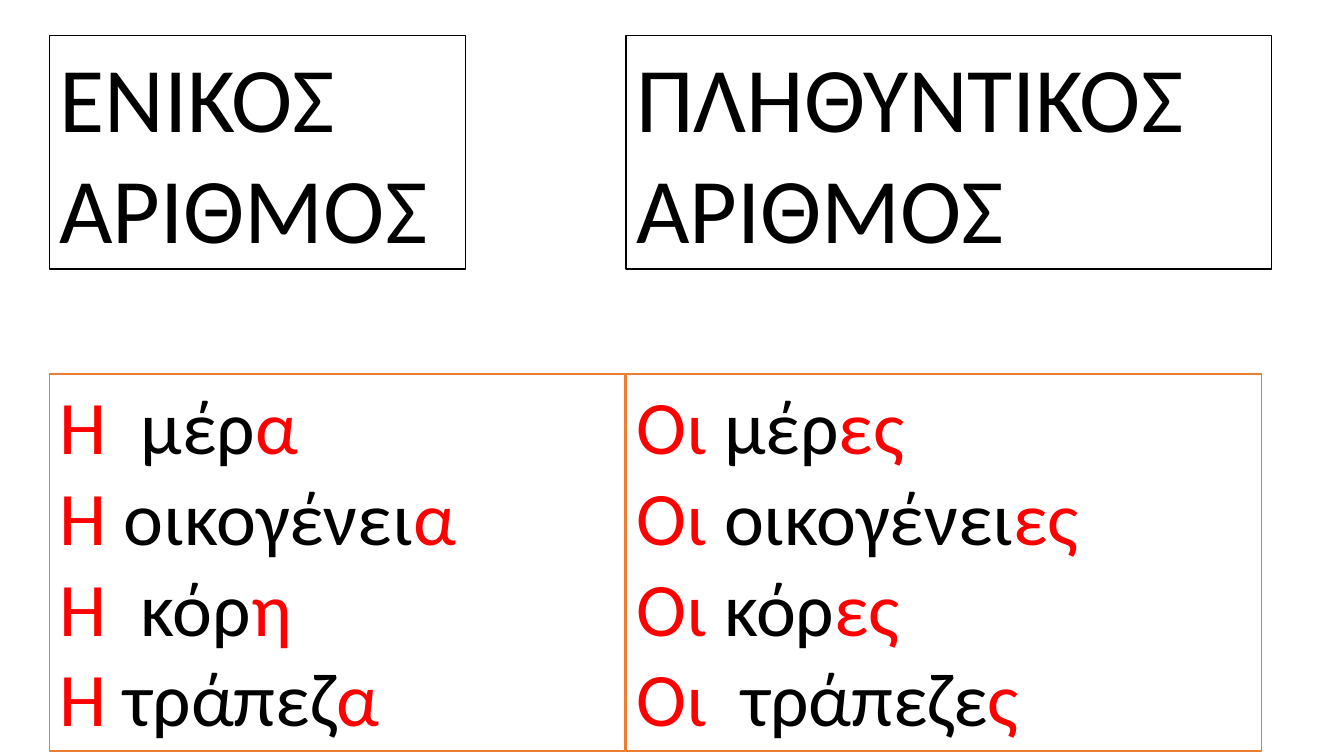
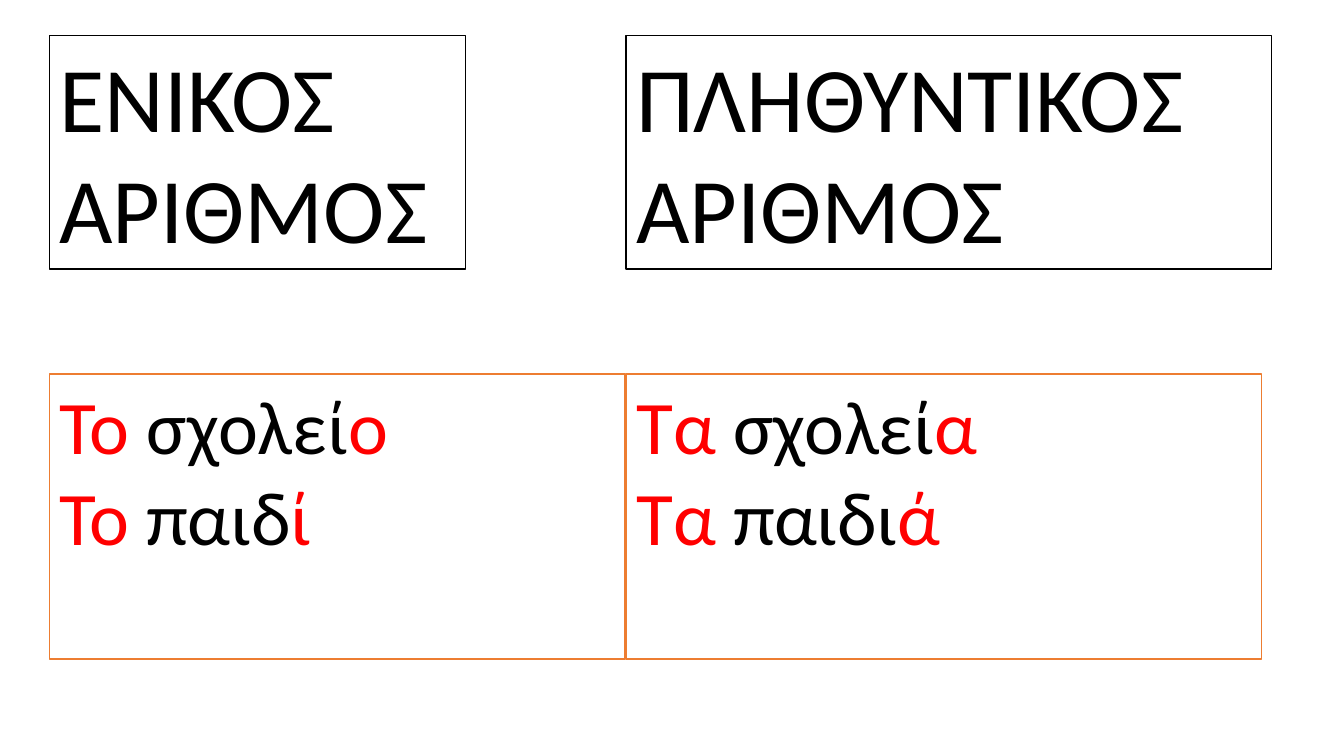
from lxml.etree import SubElement
from pptx import Presentation
from pptx.dml.color import RGBColor
from pptx.enum.text import MSO_ANCHOR as Anchor, MSO_AUTO_SIZE as AutoSize, PP_ALIGN as Align
from pptx.oxml.ns import qn
from pptx.util import Inches, Pt

FONT = "Calibri"
BLACK, WHITE, RED, ORANGE = "000000", "FFFFFF", "FF0000", "ED7D31"
COMPARISON_LAYOUT = 4
LEFT, MIDDLE = 0.49, 6.21
HEADING_TOP, WORDS_TOP = 0.35, 3.71
HEADING_HEIGHT = 2.32
HEADING_SIZE, WORD_SIZE = 66, 54

COLUMNS = [
    dict(left=LEFT, heading_width=4.13, words_width=5.71,
         heading=["ΕΝΙΚΟΣ", "ΑΡΙΘΜΟΣ"], heading_idx=1, words_idx=2),
    dict(left=MIDDLE, heading_width=6.4, words_width=6.3,
         heading=["ΠΛΗΘΥΝΤΙΚΟΣ", "ΑΡΙΘΜΟΣ"], heading_idx=3, words_idx=4),
]

FEMININE = [
    [("Η  ", "μέρ", "α"), ("Η ", "οικογένει", "α"),
     ("Η  ", "κόρ", "η"), ("Η ", "τράπεζ", "α")],
    [("Οι ", "μέρ", "ες"), ("Οι ", "οικογένει", "ες"),
     ("Οι ", "κόρ", "ες"), ("Οι  ", "τράπεζε", "ς")],
]
NEUTER = [
    [("Το ", "σχολεί", "ο"), ("Το", " παιδ", "ί")],
    [("Τα ", "σχολεί", "α"), ("Τα ", "παιδι", "ά")],
]


def color(value):
    return RGBColor.from_string(value)


def add_text(para, text, *, size, fill=BLACK):
    span = para.add_run()
    span.text = text
    span.font.name = FONT
    span.font.size = Pt(size)
    span.font.bold = False
    span.font.color.rgb = color(fill)


def place_box(box, left, top, width, height, *, outline):
    box.left, box.top = Inches(left), Inches(top)
    box.width, box.height = Inches(width), Inches(height)
    box.fill.solid()
    box.fill.fore_color.rgb = color(WHITE)
    box.line.color.rgb = color(outline)
    box.line.width = Pt(1)
    frame = box.text_frame
    frame.word_wrap = True
    frame.auto_size = AutoSize.NONE
    frame.vertical_anchor = Anchor.TOP


def add_line(box, index):
    frame = box.text_frame
    para = frame.add_paragraph() if index else frame.paragraphs[0]
    para.alignment = Align.LEFT
    para.line_spacing = 1.0
    para.space_before = para.space_after = Pt(0)
    properties = para._p.get_or_add_pPr()
    properties.set("marL", "0")
    properties.set("indent", "0")
    SubElement(properties, qn("a:buNone"))
    return para


def fill_heading(box, lines):
    for index, text in enumerate(lines):
        add_text(add_line(box, index), text, size=HEADING_SIZE)


def fill_words(box, words):
    for index, (article, stem, ending) in enumerate(words):
        para = add_line(box, index)
        add_text(para, article, size=WORD_SIZE, fill=RED)
        add_text(para, stem, size=WORD_SIZE)
        add_text(para, ending, size=WORD_SIZE, fill=RED)


def add_number_page(deck, word_columns, words_height):
    page = deck.slides.add_slide(deck.slide_layouts[COMPARISON_LAYOUT])
    boxes = {box.placeholder_format.idx: box for box in page.placeholders}
    for column, words in zip(COLUMNS, word_columns):
        heading = boxes.pop(column["heading_idx"])
        place_box(heading, column["left"], HEADING_TOP, column["heading_width"],
                  HEADING_HEIGHT, outline=BLACK)
        fill_heading(heading, column["heading"])
        body = boxes.pop(column["words_idx"])
        place_box(body, column["left"], WORDS_TOP, column["words_width"],
                  words_height, outline=ORANGE)
        fill_words(body, words)
    for unused in boxes.values():
        unused.element.getparent().remove(unused.element)


def main():
    deck = Presentation()
    deck.slide_width, deck.slide_height = Inches(13.33), Inches(7.5)
    add_number_page(deck, FEMININE, words_height=3.74)
    add_number_page(deck, NEUTER, words_height=2.83)
    deck.save("out.pptx")


if __name__ == "__main__":
    main()
